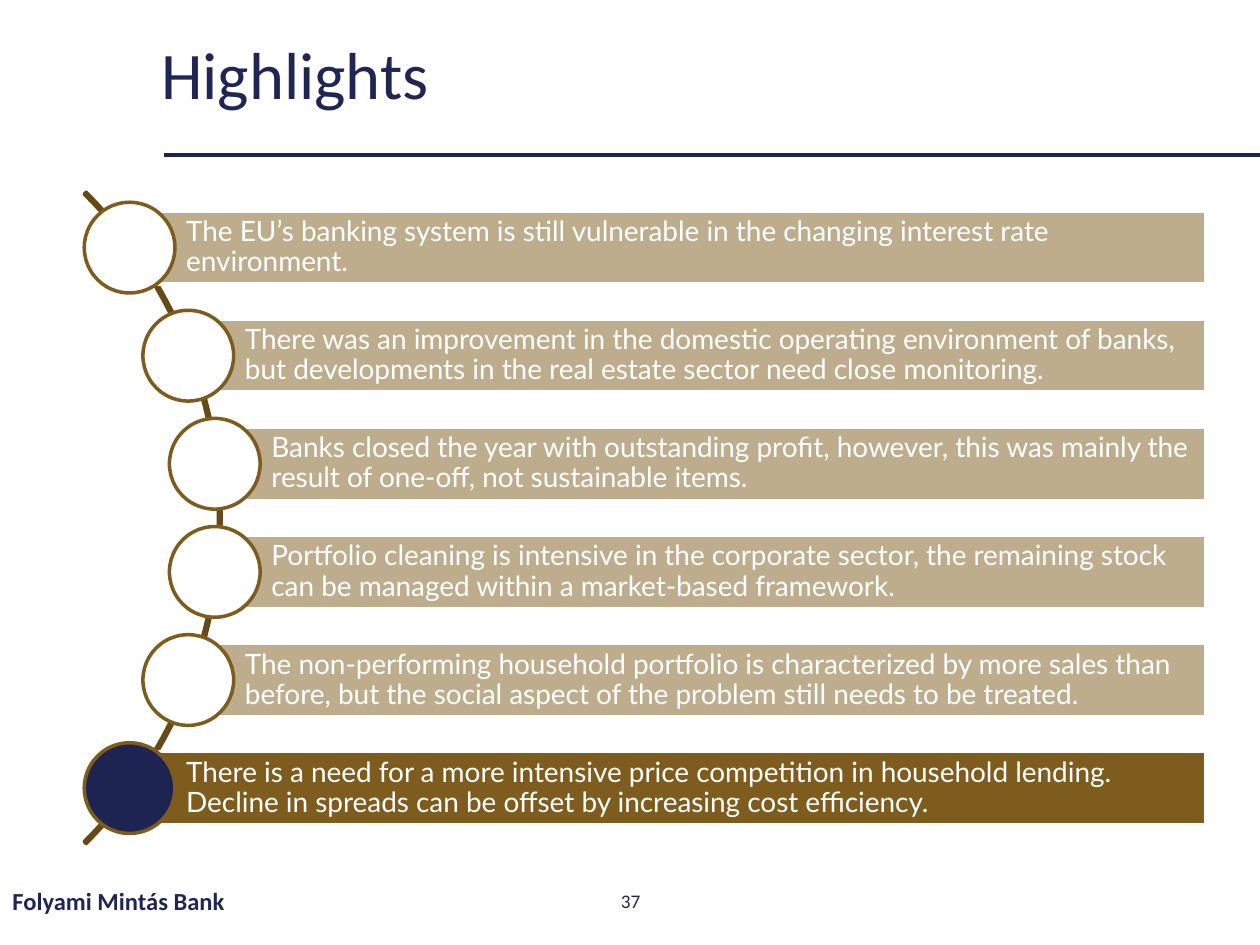
from math import sqrt

from lxml import etree
from pptx import Presentation
from pptx.dml.color import RGBColor
from pptx.enum.shapes import MSO_CONNECTOR, MSO_SHAPE
from pptx.enum.text import MSO_ANCHOR, MSO_AUTO_SIZE, PP_ALIGN
from pptx.oxml.ns import qn
from pptx.util import Inches, Pt

LEFT, CENTER = PP_ALIGN.LEFT, PP_ALIGN.CENTER
MIDDLE, NO_FIT = MSO_ANCHOR.MIDDLE, MSO_AUTO_SIZE.NONE
STRAIGHT = MSO_CONNECTOR.STRAIGHT
RECT, OVAL, ARC = MSO_SHAPE.RECTANGLE, MSO_SHAPE.OVAL, MSO_SHAPE.BLOCK_ARC

COLORS = {"text": "202653", "navy": "1E2452", "brown": "7E5C1D",
          "arc": "654A17", "white": "FFFFFF"}

# Slide size, and the arc that the circles follow
WIDTH, HEIGHT = 10, 7.5
ARC_X, ARC_Y, ARC_RADIUS = -1.9, 4.11, 3.655
TRACK_RADIUS = 3.63
PITCH, CIRCLE = 0.858, 0.72
BAR_HEIGHT, BAR_RIGHT = 0.58, 9.57

HIGHLIGHTS = [
    "The EU’s banking system is still vulnerable in the changing interest rate environment.",
    "There was an improvement in the domestic operating environment of banks, "
    "but developments in the real estate sector need close monitoring.",
    "Banks closed the year with outstanding profit, however, this was mainly the "
    "result of one-off, not sustainable items.",
    "Portfolio cleaning is intensive in the corporate sector, the remaining stock "
    "can be managed within a market-based framework.",
    "The non-performing household portfolio is characterized by more sales than "
    "before, but the social aspect of the problem still needs to be treated.",
    "There is a need for a more intensive price competition in household lending. "
    "Decline in spreads can be offset by increasing cost efficiency.",
]


def rgb(name):
    return RGBColor.from_string(COLORS[name])


def write(tf, text, size, font="Calibri", color="text", bold=False,
          align=LEFT, spacing=None):
    tf.word_wrap = True
    tf.auto_size = NO_FIT
    tf.vertical_anchor = MIDDLE
    p = tf.paragraphs[0]
    p.alignment = align
    p.line_spacing = spacing
    r = p.add_run()
    r.text = text
    r.font.name, r.font.size, r.font.bold = font, Pt(size), bold
    r.font.color.rgb = rgb(color)


def add_shape(s, kind, x, y, w, h, fill, line):
    sp = s.shapes.add_shape(kind, Inches(x), Inches(y), Inches(w), Inches(h))
    sp.shadow.inherit = False
    if fill:
        sp.fill.solid()
        sp.fill.fore_color.rgb = rgb(fill)
    else:
        sp.fill.background()
    sp.line.color.rgb = rgb(line)
    sp.line.width = Pt(2)
    return sp


def add_label(s, x, w, text, size, **style):
    box = s.shapes.add_textbox(Inches(x), Inches(6.95), Inches(w), Inches(0.4))
    write(box.text_frame, text, size, **style)


def add_title(s, text):
    title = s.shapes.title
    title.left, title.top = Inches(1.18), Inches(0.2)
    title.width, title.height = Inches(8.19), Inches(0.83)
    write(title.text_frame, text, 38, spacing=0.9)
    rule = s.shapes.add_connector(STRAIGHT, Inches(1.3), Inches(1.23),
                                  Inches(WIDTH), Inches(1.23))
    rule.line.color.rgb = rgb("navy")
    rule.line.width = Pt(2.25)
    etree.SubElement(rule._element.spPr, qn("a:effectLst"))


def add_arc(s):
    arc = add_shape(s, ARC, ARC_X - ARC_RADIUS, ARC_Y - ARC_RADIUS,
                    2 * ARC_RADIUS, 2 * ARC_RADIUS, None, "arc")
    for i, value in enumerate((189, 27, 0.003)):
        arc.adjustments[i] = value


def add_highlight(s, index, text, final):
    # The circle's centre lies on the track; the bar starts there
    dy = (index - (len(HIGHLIGHTS) - 1) / 2) * PITCH
    x = ARC_X + sqrt(TRACK_RADIUS ** 2 - dy ** 2)
    y = ARC_Y + dy
    bar = add_shape(s, RECT, x, y - BAR_HEIGHT / 2, BAR_RIGHT - x, BAR_HEIGHT,
                    "brown", "white")
    if not final:
        color = bar._element.spPr.find(qn("a:solidFill"))[0]
        etree.SubElement(color, qn("a:alpha"), val="50000")
    tf = bar.text_frame
    tf.margin_left = Inches(0.45)
    tf.margin_top = tf.margin_right = tf.margin_bottom = Inches(0.04)
    write(tf, text, 16, font="Lato", color="white", spacing=0.9)
    add_shape(s, OVAL, x - CIRCLE / 2, y - CIRCLE / 2, CIRCLE, CIRCLE,
              "navy" if final else "white", "brown")


def main():
    prs = Presentation()
    prs.slide_width, prs.slide_height = Inches(WIDTH), Inches(HEIGHT)
    s = prs.slides.add_slide(prs.slide_layouts[5])

    add_title(s, "Highlights")

    # Footer
    add_label(s, 0, 3.38, "Folyami Mintás Bank", 14, bold=True)
    add_label(s, 3.88, 2.25, "37", 11, align=CENTER)

    # Highlights along the arc
    add_arc(s)
    for i, text in enumerate(HIGHLIGHTS):
        add_highlight(s, i, text, final=i == len(HIGHLIGHTS) - 1)

    prs.save("out.pptx")


if __name__ == "__main__":
    main()
